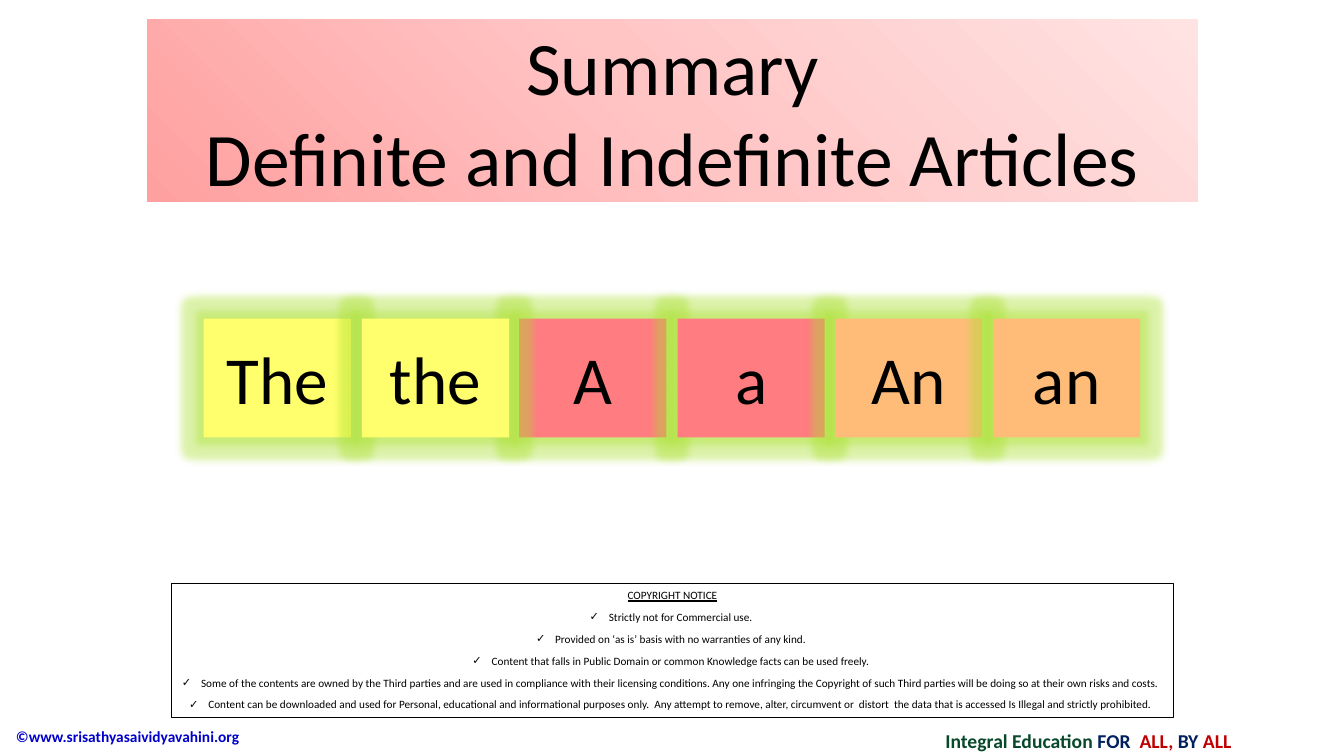
from copy import deepcopy

from pptx import Presentation
from pptx.dml.color import RGBColor
from pptx.enum.shapes import MSO_SHAPE
from pptx.enum.text import MSO_ANCHOR, PP_ALIGN
from pptx.oxml import parse_xml
from pptx.oxml.ns import nsdecls, qn
from pptx.util import Pt

PX = 9144  # 100 px to the inch


class Theme:
    font = "Calibri"
    black = "000000"
    web_blue = "0000CC"
    green = "08482B"
    navy = "002060"
    red = "C00000"
    yellow_card = "FFFF6D"
    red_card = "FF7C80"
    orange_card = "FFBC79"
    glow = "AAE12D"
    title_stops = [(0, "FFA0A0"), (0.5, "FFC5C5"), (1, "FFE3E3")]
    title_size = 54
    card_size = 48
    motto_size = 14
    web_size = 11
    notice_size = 8


def add_box(left, top, width, height, anchor=MSO_ANCHOR.MIDDLE):
    """Add a bare rectangle with wrapped text and no fill, line or shadow."""
    shape = slide.shapes.add_shape(
        MSO_SHAPE.RECTANGLE, left * PX, top * PX, width * PX, height * PX)
    shape.shadow.inherit = False
    shape.fill.background()
    shape.line.fill.background()
    shape.text_frame.word_wrap = True
    shape.text_frame.vertical_anchor = anchor
    return shape


def write(paragraph, runs, size, align=PP_ALIGN.CENTER, **formats):
    """Fill a paragraph with (text, colour) runs."""
    paragraph.alignment = align
    for text, color in runs:
        run = paragraph.add_run()
        run.text = text
        run.font.color.rgb = RGBColor.from_string(color)
        for name, value in {"name": Theme.font, "size": Pt(size), **formats}.items():
            setattr(run.font, name, value)


presentation = Presentation()
presentation.slide_width = 1333 * PX
presentation.slide_height = 750 * PX
slide = presentation.slides.add_slide(presentation.slide_layouts[6])

# Footer
website = add_box(6, 710, 353, 41)
write(website.text_frame.paragraphs[0],
      [("©www.srisathyasaividyavahini.org", Theme.web_blue)],
      Theme.web_size, PP_ALIGN.LEFT, bold=True)

motto = add_box(835, 712, 489, 45)
write(motto.text_frame.paragraphs[0],
      [("Integral Education ", Theme.green), ("FOR  ", Theme.navy),
       ("ALL, ", Theme.red), ("BY", Theme.navy), (" ALL", Theme.red)],
      Theme.motto_size, bold=True)

# Copyright notice
terms = [
    "Strictly not for Commercial use. ",
    "Provided on ‘as is’ basis with no warranties of any kind. ",
    "Content that falls in Public Domain or common Knowledge facts can be used freely. ",
    "Some of the contents are owned by the Third parties and are used in compliance with "
    "their licensing conditions. Any one infringing the Copyright of such Third parties "
    "will be doing so at their own risks and costs. ",
    "Content can be downloaded and used for Personal, educational and informational "
    "purposes only.  Any attempt to remove, alter, circumvent or  distort  the data that "
    "is accessed Is Illegal and strictly prohibited. ",
]
notice = add_box(170, 579, 994, 133, MSO_ANCHOR.TOP)
notice.line.color.rgb = RGBColor.from_string(Theme.black)
notice.line.width = Pt(0.75)
heading = notice.text_frame.paragraphs[0]
heading.space_after = Pt(6)
write(heading, [("COPYRIGHT NOTICE", Theme.black)], Theme.notice_size, underline=True)
for term in terms:
    paragraph = notice.text_frame.add_paragraph()
    paragraph.space_after = Pt(6)
    properties = paragraph._p.get_or_add_pPr()
    properties.set("marL", str(19 * PX))
    properties.set("indent", str(-19 * PX))
    properties.append(parse_xml(f'<a:buFont {nsdecls("a")} typeface="Arial"/>'))
    properties.append(parse_xml(f'<a:buChar {nsdecls("a")} char="✓"/>'))
    write(paragraph, [(term, Theme.black)], Theme.notice_size)

# Title
title = add_box(146, 19, 1042, 181)
title.fill.gradient()
title.fill.gradient_angle = 45
stop_list = next(title._element.iter(qn("a:gsLst")))
stop_list.append(deepcopy(stop_list[-1]))
for stop, (position, color) in zip(title.fill.gradient_stops, Theme.title_stops):
    stop.position = position
    stop.color.rgb = RGBColor.from_string(color)
title_paragraph = title.text_frame.paragraphs[0]
write(title_paragraph, [("Summary", Theme.black)], Theme.title_size)
title_paragraph.add_line_break()
write(title_paragraph, [("Definite and Indefinite Articles", Theme.black)],
      Theme.title_size)

# Article cards: column, word, colour; the yellow pair lies on top
cards = [
    (2, "A", Theme.red_card), (3, "a", Theme.red_card),
    (4, "An", Theme.orange_card), (5, "an", Theme.orange_card),
    (0, "The", Theme.yellow_card), (1, "the", Theme.yellow_card),
]
for column, word, color in cards:
    card = add_box(202 + round(column * 156.6), 316, 146, 118)
    card.fill.solid()
    card.fill.fore_color.rgb = RGBColor.from_string(color)
    card._element.spPr.find(qn("a:effectLst")).append(parse_xml(
        f'<a:glow {nsdecls("a")} rad="{15 * PX}"><a:srgbClr val="{Theme.glow}">'
        '<a:alpha val="40000"/></a:srgbClr></a:glow>'))
    write(card.text_frame.paragraphs[0], [(word, Theme.black)], Theme.card_size)

presentation.save("out.pptx")
